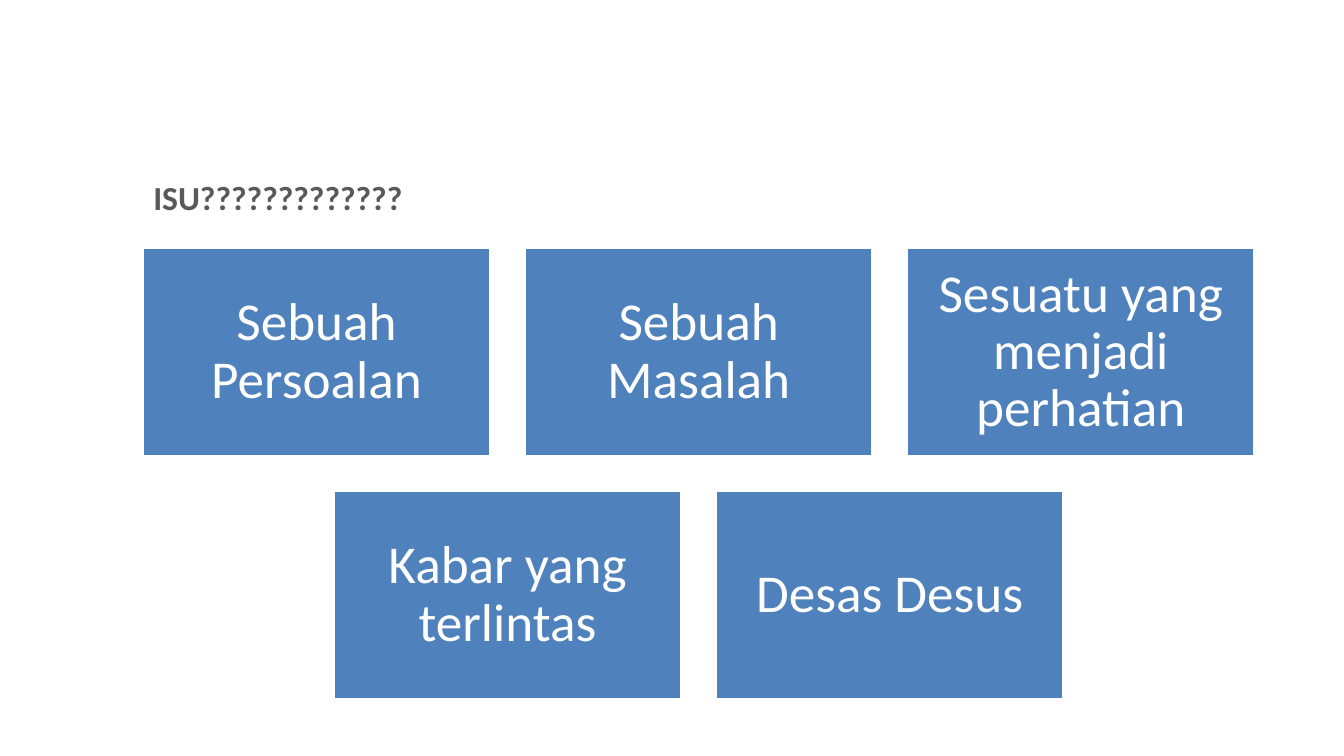
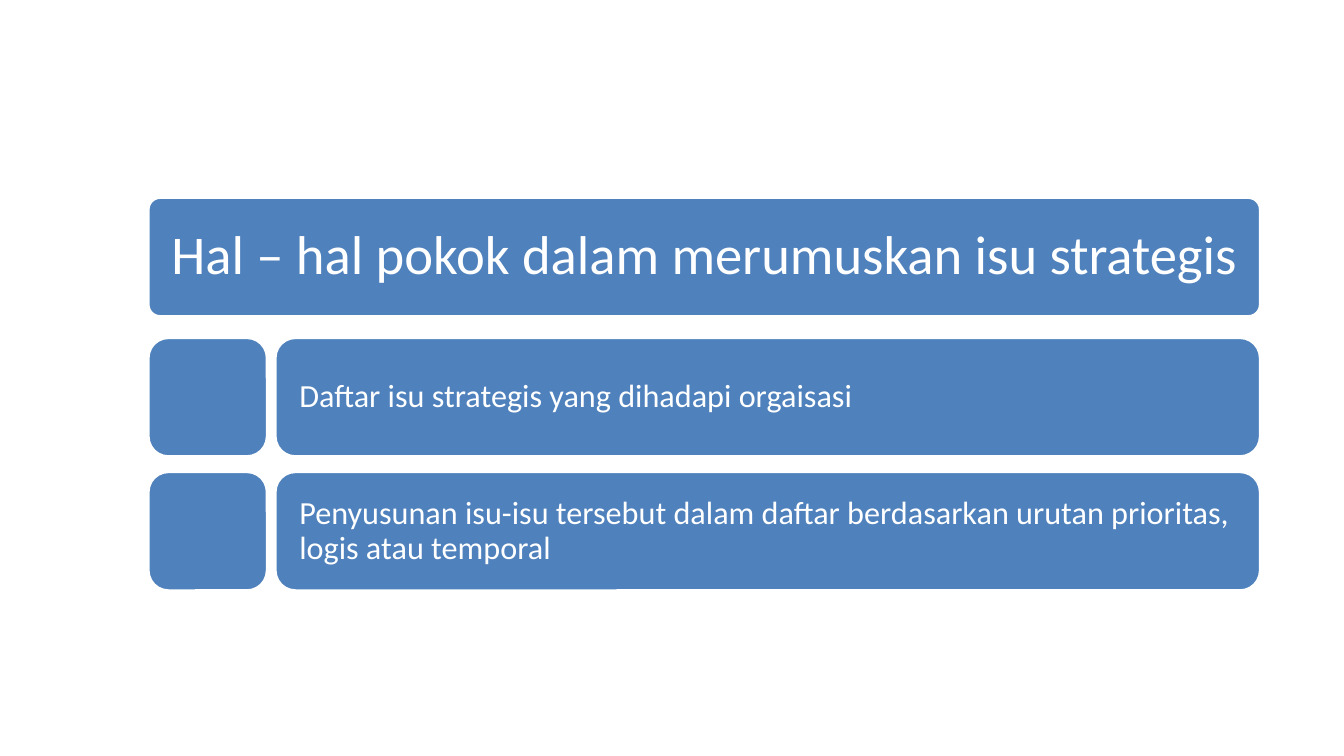
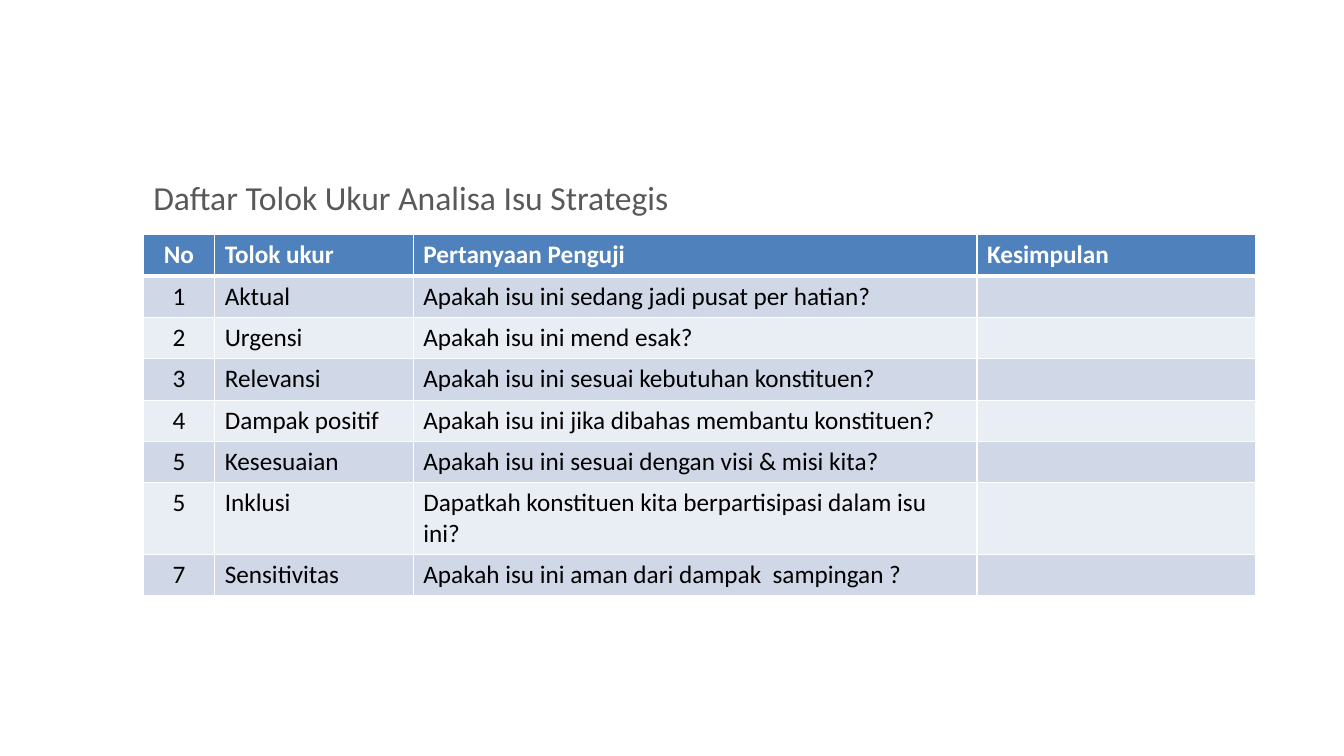
from lxml import etree
from pptx import Presentation
from pptx.dml.color import RGBColor
from pptx.enum import shapes, text
from pptx.oxml import ns
from pptx.util import Inches, Pt

FONT = "Calibri"
COLORS = {
    "accent": "4F81BD",
    "white": "FFFFFF",
    "title": "595959",
    "body": "000000",
    "band_dark": "D0D8E8",
    "band_light": "E9EDF4",
}
TITLE_ONLY, BLANK = 5, 6
LEFT, ALIGN = 1.42, text.PP_ALIGN

MEANINGS = [
    ["Sebuah Persoalan", "Sebuah Masalah", "Sesuatu yang menjadi perhatian"],
    ["Kabar yang terlintas", "Desas Desus"],
]
KEY_POINTS = [
    "Daftar isu strategis yang dihadapi orgaisasi",
    "Penyusunan isu-isu tersebut dalam daftar berdasarkan urutan prioritas, "
    "logis atau temporal",
]
CRITERIA = [
    ("No", "Tolok ukur", "Pertanyaan Penguji", "Kesimpulan"),
    ("1", "Aktual", "Apakah isu ini sedang jadi pusat per hatian?", ""),
    ("2", "Urgensi", "Apakah isu ini mend esak?", ""),
    ("3", "Relevansi", "Apakah isu ini sesuai kebutuhan konstituen?", ""),
    ("4", "Dampak positif", "Apakah isu ini jika dibahas membantu konstituen?", ""),
    ("5", "Kesesuaian", "Apakah isu ini sesuai dengan visi & misi kita?", ""),
    ("5", "Inklusi", "Dapatkah konstituen kita berpartisipasi dalam isu ini?", ""),
    ("7", "Sensitivitas", "Apakah isu ini aman dari dampak  sampingan ?", ""),
]
COLUMN_WIDTHS = [0.71, 1.97, 5.59, 2.76]
ROW_HEIGHTS = [0.41] * 6 + [0.71, 0.41]


def rgb(name):
    return RGBColor.from_string(COLORS[name])


def style_paragraph(paragraph, size, color, align=ALIGN.LEFT, bold=False):
    paragraph.alignment = align
    font = paragraph.font
    font.name, font.size, font.bold = FONT, Pt(size), bold
    font.color.rgb = rgb(color)


def add_titled_slide(deck, wording, bold=False):
    slide = deck.slides.add_slide(deck.slide_layouts[TITLE_ONLY])
    title = slide.shapes.title
    title.left, title.top = Inches(LEFT), Inches(1.7)
    title.width, title.height = Inches(11.02), Inches(0.47)
    frame = title.text_frame
    frame.text = wording
    frame.vertical_anchor = text.MSO_ANCHOR.TOP
    frame.auto_size = text.MSO_AUTO_SIZE.NONE
    style_paragraph(frame.paragraphs[0], 24, "title", bold=bold)
    return slide


def add_block(slide, left, top, width, height, wording="", size=38,
              align=ALIGN.CENTER, insets=(0.16, 0.16), corner=None):
    """Draw a blue block; corner is the rounding ratio, insets are (side, top and bottom)."""
    kind = shapes.MSO_SHAPE.RECTANGLE if corner is None else shapes.MSO_SHAPE.ROUNDED_RECTANGLE
    block = slide.shapes.add_shape(
        kind, Inches(left), Inches(top), Inches(width), Inches(height))
    if corner is not None:
        block.adjustments[0] = corner
    block.shadow.inherit = False
    block.fill.solid()
    block.fill.fore_color.rgb = rgb("accent")
    block.line.color.rgb = rgb("white")
    block.line.width = Pt(2)
    if wording:
        frame = block.text_frame
        frame.text = wording
        frame.word_wrap = True
        frame.vertical_anchor = text.MSO_ANCHOR.MIDDLE
        frame.margin_left = frame.margin_right = Inches(insets[0])
        frame.margin_top = frame.margin_bottom = Inches(insets[1])
        style_paragraph(frame.paragraphs[0], size, "white", align)
        frame.paragraphs[0].line_spacing = 0.9


def set_borders(cell, bottom):
    properties = cell._tc.get_or_add_tcPr()
    for side, points in (("L", 1), ("R", 1), ("T", 1), ("B", bottom)):
        line = etree.SubElement(properties, ns.qn(f"a:ln{side}"), w=str(Pt(points)))
        fill = etree.SubElement(line, ns.qn("a:solidFill"))
        etree.SubElement(fill, ns.qn("a:srgbClr"), val=COLORS["white"])


def add_criteria_table(slide, top):
    table = slide.shapes.add_table(
        len(CRITERIA), len(COLUMN_WIDTHS), Inches(LEFT), Inches(top),
        Inches(sum(COLUMN_WIDTHS)), Inches(sum(ROW_HEIGHTS))).table
    for column, width in zip(table.columns, COLUMN_WIDTHS):
        column.width = Inches(width)
    for row, height in zip(table.rows, ROW_HEIGHTS):
        row.height = Inches(height)
    for r, wordings in enumerate(CRITERIA):
        header = r == 0
        band = "accent" if header else "band_dark" if r % 2 else "band_light"
        for c, wording in enumerate(wordings):
            cell = table.cell(r, c)
            cell.text = wording
            set_borders(cell, bottom=3 if header else 1)
            cell.fill.solid()
            cell.fill.fore_color.rgb = rgb(band)
            style_paragraph(cell.text_frame.paragraphs[0], 18,
                            "white" if header else "body",
                            ALIGN.LEFT if c else ALIGN.CENTER, bold=header)


def build_meanings(deck):
    slide = add_titled_slide(deck, "ISU?????????????", bold=True)
    width, height, gap, center = 3.45, 2.07, 0.34, 6.93
    for r, row in enumerate(MEANINGS):
        row_left = center - (len(row) * (width + gap) - gap) / 2
        for c, meaning in enumerate(row):
            add_block(slide, row_left + c * (width + gap),
                      2.46 + r * (height + gap), width, height, meaning)


def build_key_points(deck):
    slide = deck.slides.add_slide(deck.slide_layouts[BLANK])
    left, width, height, gap = 1.47, 11.03, 1.18, 0.08
    add_block(slide, left, 1.96, width, height,
              "Hal – hal pokok dalam merumuskan isu strategis",
              size=39, insets=(0.08, 0.05), corner=0.1)
    for i, point in enumerate(KEY_POINTS):
        top = 3.35 + i * 1.33
        add_block(slide, left, top, height, height, corner=0.17)
        add_block(slide, left + height + gap, top, width - height - gap, height,
                  point, size=23, align=ALIGN.LEFT, insets=(0.18, 0.18), corner=0.17)


def build_criteria(deck):
    slide = add_titled_slide(deck, "Daftar Tolok Ukur Analisa Isu Strategis")
    add_criteria_table(slide, 2.33)


def main():
    deck = Presentation()
    deck.slide_width, deck.slide_height = Inches(13.33), Inches(7.5)
    build_meanings(deck)
    build_key_points(deck)
    build_criteria(deck)
    deck.save("out.pptx")


if __name__ == "__main__":
    main()
